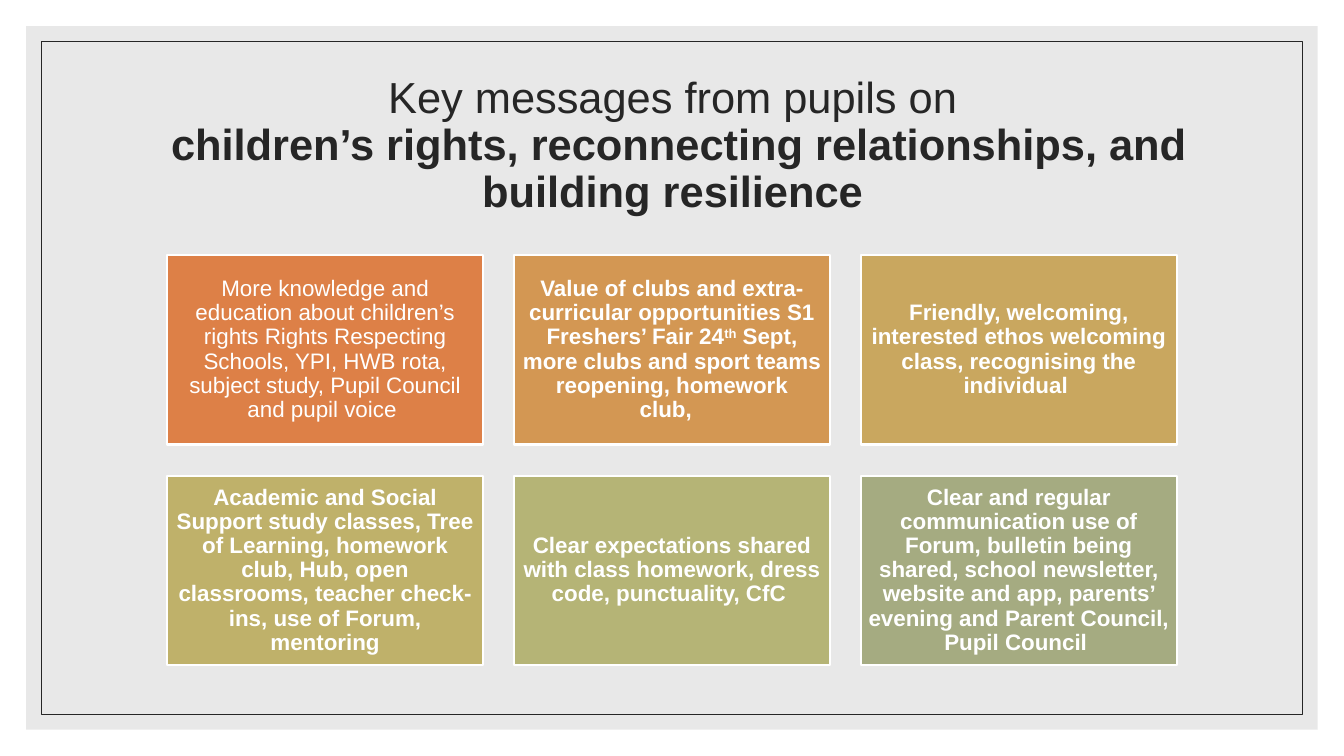
from lxml.etree import SubElement
from pptx import Presentation
from pptx.dml.color import RGBColor
from pptx.enum.shapes import MSO_SHAPE
from pptx.enum.text import MSO_ANCHOR, MSO_AUTO_SIZE, PP_ALIGN
from pptx.oxml.ns import qn
from pptx.util import Inches, Pt

# Each run is (text, style); "~" stands for a no-break space
NO_BREAK_SPACE = chr(160)
TITLE = [
    ("Key messages from pupils on\v ", "plain"),
    ("children’s rights, reconnecting relationships, and building resilience", "bold"),
]
MESSAGES = [
    ("orange", [("More knowledge and education about children’s rights~Rights~Respecting Schools, "
                 "YPI, HWB rota, subject study, Pupil Council and pupil voice~", "plain")]),
    ("amber", [("Value of clubs and extra-curricular opportunities~S1 Freshers’ Fair 24", "bold"),
               ("th", "superscript"),
               ("~Sept, more clubs and sport teams reopening, homework club,~~", "bold")]),
    ("gold", [("Friendly, welcoming, interested ethos~welcoming class, "
               "recognising the individual~", "bold")]),
    ("straw", [("Academic and Social Support~study classes, Tree of Learning, homework club, Hub, "
                "open classrooms, teacher check-ins, use of Forum, mentoring", "bold")]),
    ("olive", [("Clear expectations shared with class~homework, dress code, "
                "punctuality,~CfC~", "bold")]),
    ("sage", [("Clear and regular communication~use of Forum, bulletin being shared, "
               "school newsletter, website and app, parents’ evening and Parent Council, "
               "Pupil Council~", "bold")]),
]
COLOURS = {
    "white": "FFFFFF", "grey": "D9D9D9", "ink": "262626",
    "orange": "DD8047", "amber": "D39753", "gold": "C9A75F",
    "straw": "BFB16A", "olive": "B5B476", "sage": "A5AB81",
}
WIDTH, HEIGHT = 13.33, 7.5
PANEL_MARGIN, FRAME_MARGIN = 0.26, 0.41
TITLE_BOX = (1.17, 0.7, 11, 1.5)
COLUMNS = 3
GRID_LEFT, GRID_TOP = 1.66, 2.53
CARD_WIDTH, CARD_HEIGHT, GAP = 3.13, 1.88, 0.31


def colour(name):
    return RGBColor.from_string(COLOURS[name])


def inset_box(margin):
    return margin, margin, WIDTH - 2 * margin, HEIGHT - 2 * margin


def add_rectangle(slide, box, fill=None, line=None, line_width=0):
    shape = slide.shapes.add_shape(MSO_SHAPE.RECTANGLE, *map(Inches, box))
    shape.shadow.inherit = False
    if fill:
        shape.fill.solid()
        shape.fill.fore_color.rgb = colour(fill)
    else:
        shape.fill.background()
    if line:
        shape.line.color.rgb = colour(line)
        shape.line.width = Pt(line_width)
    else:
        shape.line.fill.background()
    return shape


def write_text(shape, runs, size, text_colour, inset):
    frame = shape.text_frame
    frame_format = {
        "word_wrap": True, "auto_size": MSO_AUTO_SIZE.NONE,
        "vertical_anchor": MSO_ANCHOR.MIDDLE,
        "margin_left": inset, "margin_right": inset,
        "margin_top": inset, "margin_bottom": inset,
    }
    for name, value in frame_format.items():
        setattr(frame, name, value)
    paragraph = frame.paragraphs[0]
    paragraph.alignment = PP_ALIGN.CENTER
    paragraph.line_spacing = 0.9
    for text, style in runs:
        for index, part in enumerate(text.replace("~", NO_BREAK_SPACE).split("\v")):
            if index:
                paragraph.add_line_break()
            run = paragraph.add_run()
            run.text = part
            font_format = {"name": "Arial", "size": Pt(size), "bold": style != "plain"}
            for name, value in font_format.items():
                setattr(run.font, name, value)
            run.font.color.rgb = colour(text_colour)
            if style == "superscript":
                run._r.get_or_add_rPr().set("baseline", "30000")
    # Line breaks take the size of the text around them
    for line_break in paragraph._p.findall(qn("a:br")):
        SubElement(line_break, qn("a:rPr")).set("sz", str(size * 100))


def main():
    presentation = Presentation()
    presentation.slide_width, presentation.slide_height = Inches(WIDTH), Inches(HEIGHT)
    slide = presentation.slides.add_slide(presentation.slide_layouts[5])

    add_rectangle(slide, inset_box(0), fill="white")
    panel = add_rectangle(slide, inset_box(PANEL_MARGIN), fill="grey")
    panel_colour = panel._element.spPr.find(qn("a:solidFill"))[0]
    SubElement(panel_colour, qn("a:alpha")).set("val", "60000")
    add_rectangle(slide, inset_box(FRAME_MARGIN), line="ink", line_width=0.5)

    title = slide.shapes.title
    title.left, title.top, title.width, title.height = map(Inches, TITLE_BOX)
    write_text(title, TITLE, 31, "ink", Inches(0.1))
    slide.shapes._spTree.append(title._element)  # bring in front of the panels

    for index, (fill, runs) in enumerate(MESSAGES):
        row, column = divmod(index, COLUMNS)
        box = (GRID_LEFT + column * (CARD_WIDTH + GAP),
               GRID_TOP + row * (CARD_HEIGHT + GAP), CARD_WIDTH, CARD_HEIGHT)
        card = add_rectangle(slide, box, fill, "white", 1.5)
        write_text(card, runs, 16, "white", Inches(0.07))

    presentation.save("out.pptx")


if __name__ == "__main__":
    main()
